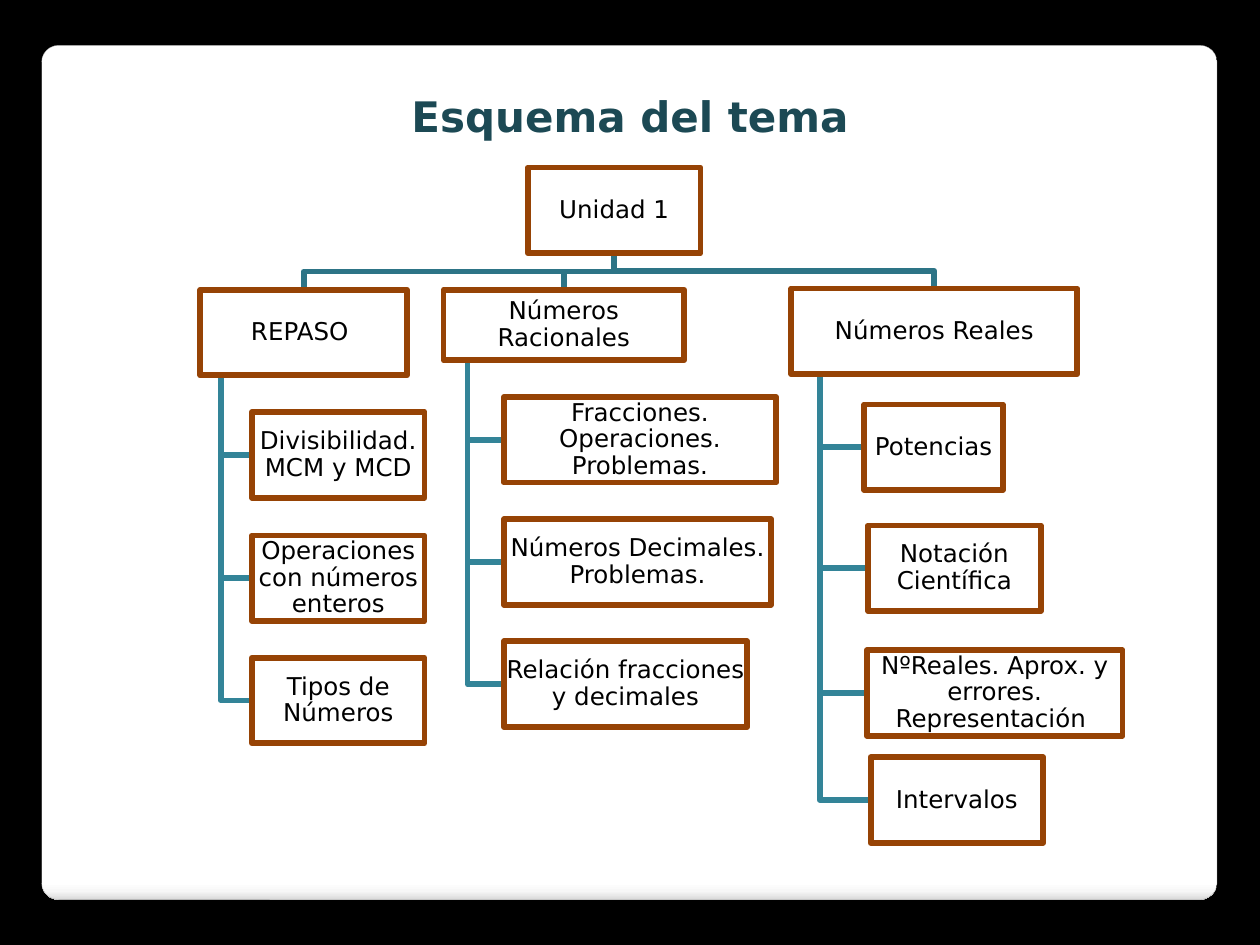
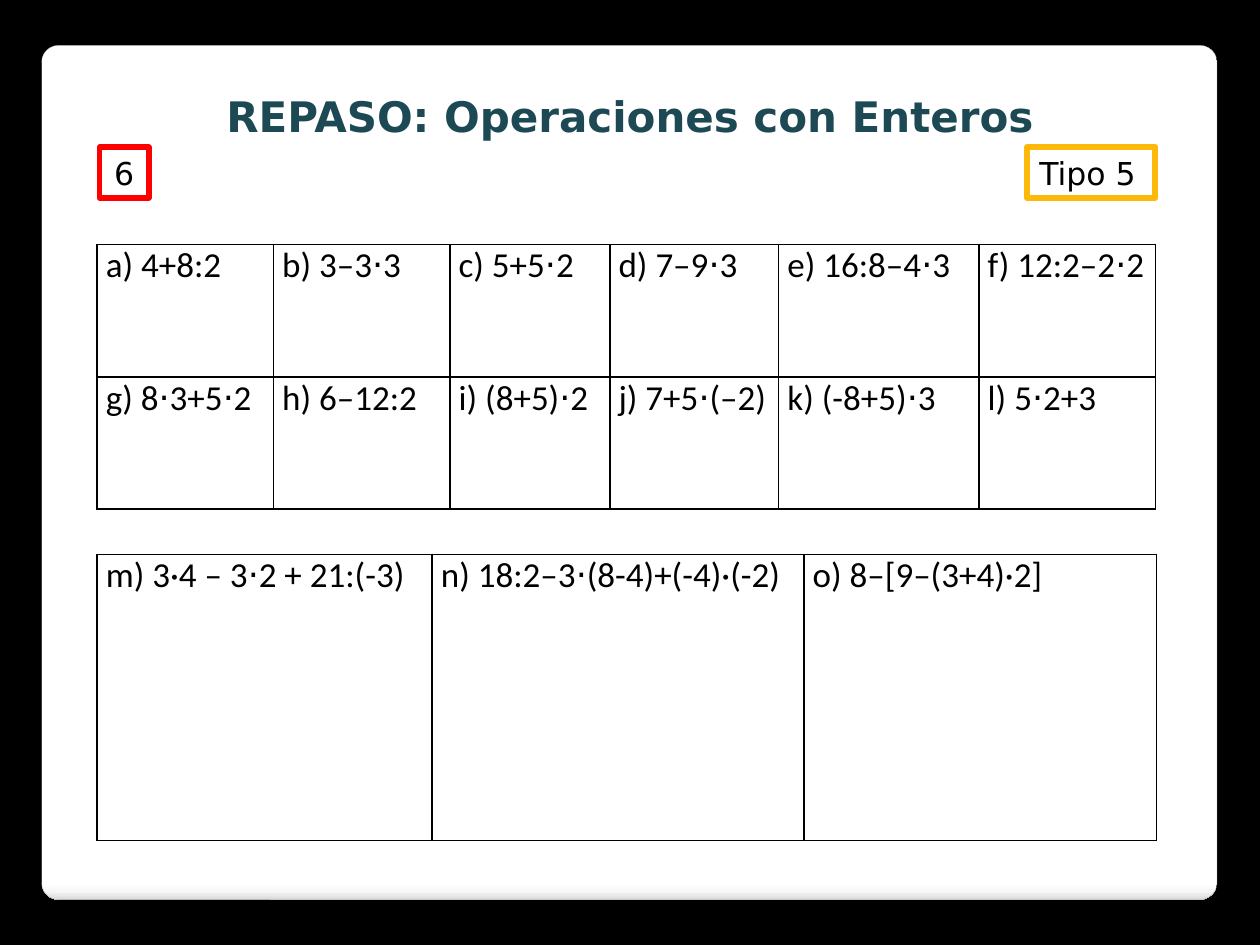
from lxml import etree
from pptx import Presentation
from pptx.dml.color import RGBColor
from pptx.enum.shapes import MSO_SHAPE as SHAPE
from pptx.enum.text import MSO_ANCHOR as ANCHOR, PP_ALIGN as ALIGN
from pptx.oxml import parse_xml
from pptx.util import Inches, Pt

BLACK = RGBColor(0x00, 0x00, 0x00)
WHITE = RGBColor(0xFF, 0xFF, 0xFF)
TITLE = RGBColor(0x1C, 0x49, 0x54)
EDGE = RGBColor(0xA4, 0xA4, 0xA4)
BROWN = RGBColor(0x96, 0x43, 0x05)
TRUNK = RGBColor(0x2D, 0x74, 0x86)
BRANCH = RGBColor(0x33, 0x84, 0x98)
AMBER = RGBColor(0xFE, 0xB8, 0x0A)
RED = RGBColor(0xFF, 0x00, 0x00)

SANS, BODY = "DejaVu Sans", "Calibri"
THICK = Pt(3.35)
NS = "http://schemas.openxmlformats.org/drawingml/2006/main"
A = f"{{{NS}}}"
PANEL_STOPS = ((0, "FFFFFF"), (98, "FFFFFF"), (99, "F7F7F7"), (100, "DADADA"))

prs = Presentation()
prs.slide_width, prs.slide_height = Inches(10), Inches(7.5)
W, H = 10, 7.5


def box(s, text, x, y, w, h, color, size, align=ALIGN.CENTER, inset=(0.1, 0.05), spacing=1.0):
    """White rectangle with a thick coloured outline and its text."""
    sp = s.shapes.add_shape(SHAPE.RECTANGLE, *map(Inches, (x, y, w, h)))
    sp.shadow.inherit = False
    sp.fill.solid()
    sp.fill.fore_color.rgb = WHITE
    sp.line.color.rgb = color
    sp.line.width = THICK
    etree.SubElement(sp.line._get_or_add_ln(), A + "round")
    tf = sp.text_frame
    tf.word_wrap = True
    tf.vertical_anchor = ANCHOR.MIDDLE
    tf.margin_left = tf.margin_right = Inches(inset[0])
    tf.margin_top = tf.margin_bottom = Inches(inset[1])
    p = tf.paragraphs[0]
    p.text, p.alignment, p.line_spacing = text, align, spacing
    p.font.name, p.font.size, p.font.color.rgb = SANS, Pt(size), BLACK


def polyline(s, color, *points):
    (x, y), *rest = [(Inches(px), Inches(py)) for px, py in points]
    builder = s.shapes.build_freeform(x, y)
    builder.add_line_segments(rest, close=False)
    sp = builder.convert_to_shape()
    sp.shadow.inherit = False
    sp.fill.background()
    sp.line.color.rgb = color
    sp.line.width = THICK
    etree.SubElement(sp.line._get_or_add_ln(), A + "round")


# Shared frame: black background, rounded panel and title
slides = []
for title in ("Esquema del tema", "REPASO: Operaciones con Enteros"):
    s = prs.slides.add_slide(prs.slide_layouts[6])
    s.background.fill.solid()
    s.background.fill.fore_color.rgb = BLACK

    panel = s.shapes.add_shape(SHAPE.ROUNDED_RECTANGLE, *map(Inches, (0.33, 0.36, 9.33, 6.78)))
    panel.adjustments[0] = 0.02
    panel.line.color.rgb = EDGE
    panel.line.width = Pt(0.16)
    panel.fill.gradient()
    panel.fill.gradient_angle = 270
    stops = panel._element.spPr.find(f".//{A}gsLst")
    for stop in list(stops):
        stops.remove(stop)
    for pos, color in PANEL_STOPS:
        stop = etree.SubElement(stops, A + "gs", pos=str(pos * 1000))
        etree.SubElement(stop, A + "srgbClr", val=color)
    panel.shadow.inherit = False
    panel._element.spPr.find(A + "effectLst").append(parse_xml(
        f'<a:outerShdw xmlns:a="{NS}" blurRad="{Pt(6)}" dist="{Pt(4)}" dir="5400000">'
        '<a:srgbClr val="000000"><a:alpha val="25000"/></a:srgbClr></a:outerShdw>'))

    tf = s.shapes.add_textbox(*map(Inches, (0.39, 0.67, W - 2 * 0.39, 0.5))).text_frame
    tf.word_wrap = True
    p = tf.paragraphs[0]
    p.text, p.alignment = title, ALIGN.CENTER
    p.font.name, p.font.size, p.font.bold = SANS, Pt(24), True
    p.font.color.rgb = TITLE
    slides.append(s)

scheme, exercises = slides

# Slide 1: tree of the unit
NODE_W, NODE_H = 1.37, 0.68
ROOT = ("Unidad 1", 4.19, 1.33, NODE_W, NODE_H)
# Each topic: its head box, then its children as (text, x, y, width)
TOPICS = [
    (("REPASO ", 1.59, 2.3, 1.64, NODE_H), [
        ("Divisibilidad. MCM y MCD", 2, 3.27, NODE_W),
        ("Operaciones con números enteros", 2, 4.25, NODE_W),
        ("Tipos de Números", 2, 5.22, NODE_W)]),
    (("Números Racionales", 3.52, 2.3, 1.91, 0.56), [
        ("Fracciones. Operaciones. Problemas.", 4, 3.15, 2.16),
        ("Números Decimales. Problemas.", 4, 4.12, 2.12),
        ("Relación fracciones y decimales", 4, 5.09, 1.93)]),
    (("Números Reales", 6.28, 2.29, 2.27, NODE_H), [
        ("Potencias", 6.86, 3.21, 1.1),
        ("Notación Científica", 6.89, 4.17, NODE_W),
        ("NºReales. Aprox. y errores. Representación ", 6.88, 5.16, 2.03),
        ("Intervalos", 6.91, 6.01, NODE_W)]),
]

root_x, root_bottom = ROOT[1] + NODE_W / 2, ROOT[2] + NODE_H
nodes = [ROOT]
for head, children in TOPICS:
    _, x, y, w, h = head
    center, middle = x + w / 2, (root_bottom + y) / 2
    polyline(scheme, TRUNK, (root_x, root_bottom), (root_x, middle), (center, middle), (center, y))
    nodes.append(head)
    stem = x + w / 10
    for text, cx, cy, cw in children:
        child_mid = cy + NODE_H / 2
        polyline(scheme, BRANCH, (stem, y + h), (stem, child_mid), (cx, child_mid))
        nodes.append((text, cx, cy, cw, NODE_H))
for node in nodes:
    box(scheme, *node, BROWN, 14, inset=(0.01, 0.01), spacing=0.9)

# Slide 2: labels and exercise tables
box(exercises, "6", 0.79, 1.17, 0.39, 0.4, RED, 18)
box(exercises, "Tipo 5", 8.15, 1.17, 1.02, 0.4, AMBER, 18, ALIGN.LEFT)

# Each table: top, row height, column widths, rows
TABLES = [
    (1.94, 1.05, (1.4, 1.4, 1.27, 1.34, 1.59, 1.4), [
        ("a) 4+8:2", "b) 3–3⋅3", "c) 5+5⋅2", "d) 7–9⋅3", "e) 16:8–4⋅3", "f) 12:2–2⋅2"),
        ("g) 8⋅3+5⋅2", "h) 6–12:2", "i) (8+5)⋅2", "j) 7+5⋅(–2)", "k) (-8+5)⋅3", "l) 5⋅2+3")]),
    (4.4, 2.27, (2.66, 2.95, 2.8), [
        ("m) 3·4 – 3⋅2 + 21:(-3)", "n) 18:2–3⋅(8-4)+(-4)·(-2)", "o) 8–[9–(3+4)·2]")]),
]
for top, row_h, widths, rows in TABLES:
    frame = exercises.shapes.add_table(
        len(rows), len(widths), Inches(0.77), Inches(top),
        Inches(sum(widths)), Inches(row_h * len(rows)))
    table = frame.table
    table.first_row = table.horz_banding = False
    for col, width in zip(table.columns, widths):
        col.width = Inches(width)
    for r, texts in enumerate(rows):
        table.rows[r].height = Inches(row_h)
        for c, text in enumerate(texts):
            cell = table.cell(r, c)
            cell.margin_left = cell.margin_right = Inches(0.07)
            cell.margin_top = cell.margin_bottom = 0
            p = cell.text_frame.paragraphs[0]
            p.text = text
            p.font.name, p.font.size, p.font.color.rgb = BODY, Pt(20), BLACK
            tcPr = cell._tc.get_or_add_tcPr()
            for side in "LRTB":
                ln = etree.SubElement(tcPr, f"{A}ln{side}", w=str(Pt(1)))
                fill = etree.SubElement(ln, A + "solidFill")
                etree.SubElement(fill, A + "srgbClr", val=str(BLACK))
            cell.fill.background()

prs.save("out.pptx")
